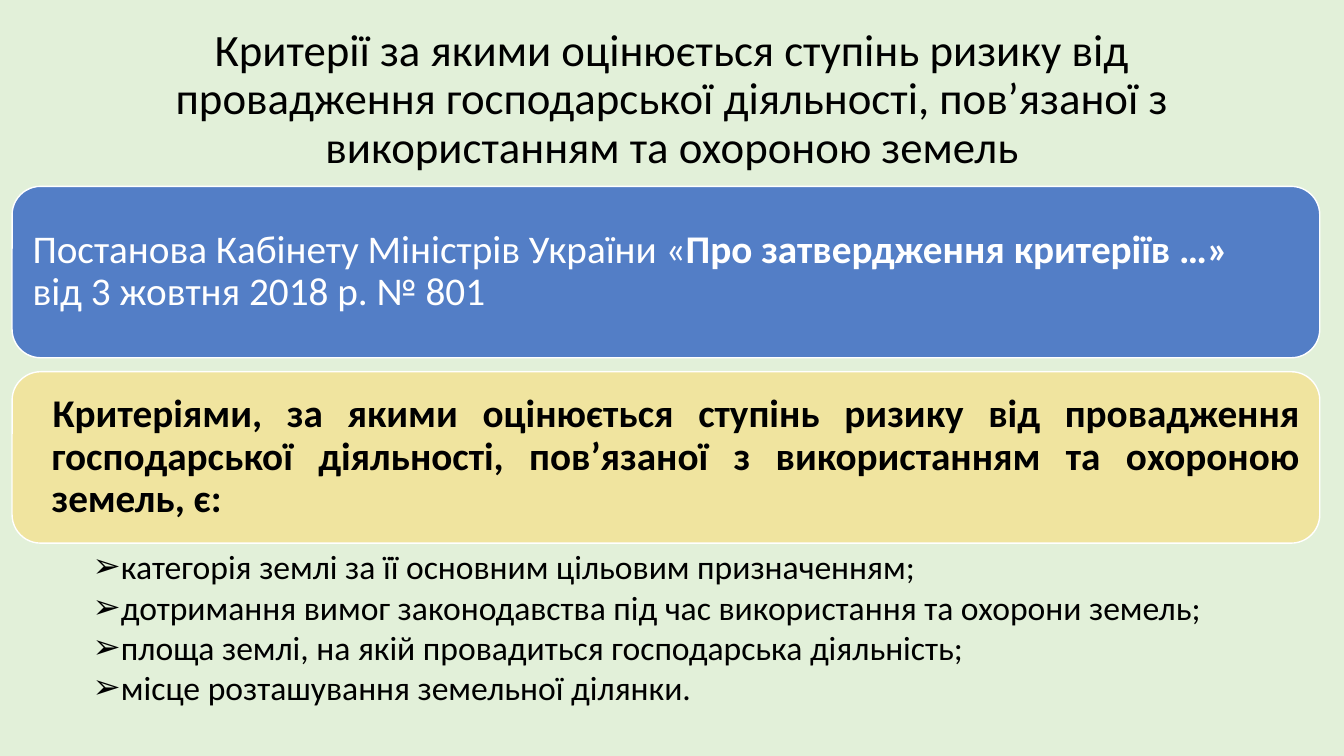
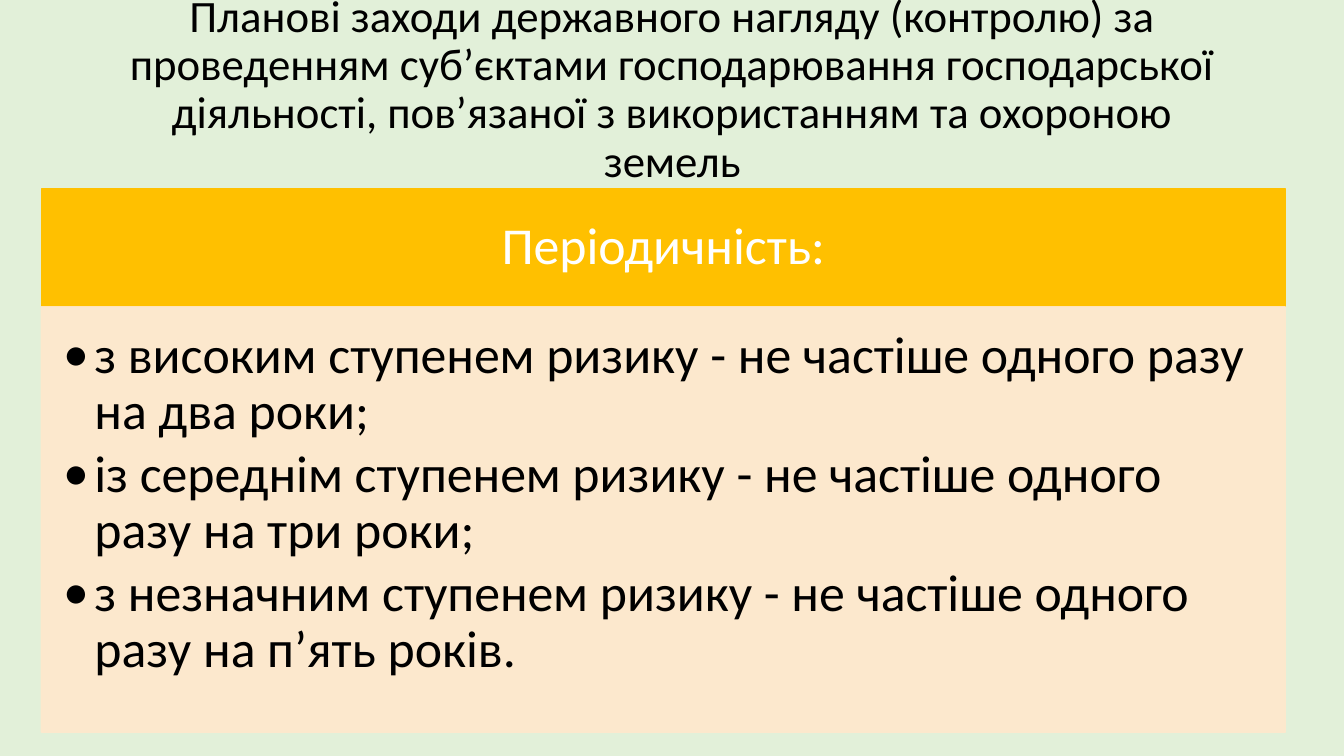
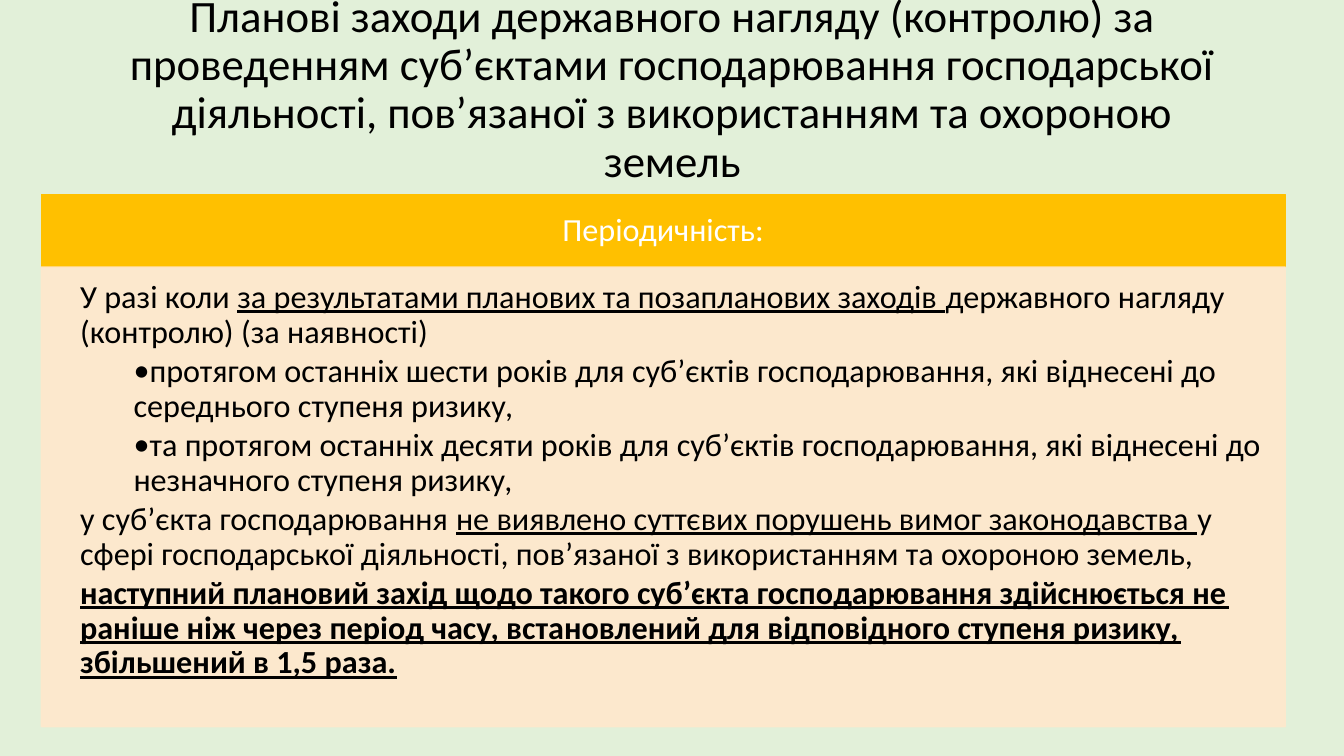
from dataclasses import dataclass

from lxml import etree
from pptx import Presentation
from pptx import util as u
from pptx.dml.color import RGBColor
from pptx.enum import shapes, text
from pptx.oxml.ns import qn


@dataclass(frozen=True)
class Theme:
    font: str = "Calibri"
    background: str = "E2F0D9"
    dark: str = "000000"
    light: str = "FFFFFF"
    blue: str = "4472C4"
    yellow: str = "FFD966"
    amber: str = "FFC000"
    cream: str = "FFE8CC"
    title_size: int = 32
    card_size: int = 28
    list_size: int = 24
    large_size: int = 37
    small_size: int = 23
    tight: float = 0.9
    paragraph_gap: float = 0.14


@dataclass
class Line:
    """One paragraph; runs are (text, style) pairs, style holding "b" and/or "u".

    margin and indent are in inches.
    """
    runs: list
    bullet: str = ""
    margin: float = 0
    indent: float = 0
    align: text.PP_ALIGN = text.PP_ALIGN.LEFT


def set_opacity(solid_parent, percent):
    """Set opacity on an element that directly holds a solid fill."""
    color = solid_parent.find(qn("a:solidFill")).find(qn("a:srgbClr"))
    etree.SubElement(color, qn("a:alpha")).set("val", str(percent * 1000))


class Deck:
    """Places elements on the current slide; lengths are percent of the slide."""

    def __init__(self, theme):
        self.theme = theme
        self.presentation = Presentation()
        self.presentation.slide_width = u.Inches(13.33)
        self.presentation.slide_height = u.Inches(7.5)
        fill = self.presentation.slide_master.background.fill
        fill.solid()
        fill.fore_color.rgb = RGBColor.from_string(theme.background)
        self.slide = None

    def box(self, left, top, width, height):
        across = self.presentation.slide_width / 100
        down = self.presentation.slide_height / 100
        return [round(n) for n in (left * across, top * down, width * across, height * down)]

    def add_slide(self, title, top):
        layout = self.presentation.slide_layouts.get_by_name("Title Only")
        self.slide = self.presentation.slides.add_slide(layout)
        shape = self.slide.shapes.title
        shape.left, shape.top, shape.width, shape.height = self.box(6.9, top, 86.25, 19.33)
        self.set_text(shape, [Line([(title, "")], align=text.PP_ALIGN.CENTER)],
                      self.theme.title_size, self.theme.dark, (0.1, 0.05, 0.1, 0.05))

    def set_text(self, shape, lines, size, color, insets, middle=True, spacing=None, gap=0):
        frame = shape.text_frame
        frame.word_wrap = True
        frame.auto_size = text.MSO_AUTO_SIZE.NONE
        frame.vertical_anchor = text.MSO_ANCHOR.MIDDLE if middle else text.MSO_ANCHOR.TOP
        (frame.margin_left, frame.margin_top,
         frame.margin_right, frame.margin_bottom) = [u.Inches(n) for n in insets]
        for index, line in enumerate(lines):
            paragraph = frame.add_paragraph() if index else frame.paragraphs[0]
            paragraph.alignment = line.align
            paragraph.line_spacing = spacing or self.theme.tight
            paragraph.space_before = u.Pt(0)
            paragraph.space_after = u.Pt(gap)
            properties = paragraph._p.get_or_add_pPr()
            properties.set("marL", str(u.Inches(line.margin)))
            properties.set("indent", str(u.Inches(line.indent)))
            if line.bullet:
                etree.SubElement(properties, qn("a:buFont")).set("typeface", self.theme.font)
                etree.SubElement(properties, qn("a:buChar")).set("char", line.bullet)
            for words, style in line.runs:
                run = paragraph.add_run()
                run.text = words
                run.font.name = self.theme.font
                run.font.size = u.Pt(size)
                run.font.color.rgb = RGBColor.from_string(color)
                run.font.bold = "b" in style
                run.font.underline = "u" in style

    def block(self, kind, place, fill, line, opacity=100, line_opacity=100):
        shape = self.slide.shapes.add_shape(kind, *self.box(*place))
        shape.shadow.inherit = False
        shape.line.width = u.Pt(1)
        for target, color in ((shape.fill, fill), (shape.line.fill, line)):
            target.solid()
            target.fore_color.rgb = RGBColor.from_string(color)
        properties = shape._element.spPr
        if opacity < 100:
            set_opacity(properties, opacity)
        if line_opacity < 100:
            set_opacity(properties.find(qn("a:ln")), line_opacity)
        return shape

    def card(self, place, fill, opacity, lines, color):
        shape = self.block(shapes.MSO_SHAPE.ROUNDED_RECTANGLE, place, fill,
                           self.theme.light, opacity)
        self.set_text(shape, lines, self.theme.card_size, color, (0.12,) * 4)

    def bullet_list(self, place, lines):
        shape = self.slide.shapes.add_textbox(*self.box(*place))
        self.set_text(shape, lines, self.theme.list_size, self.theme.dark,
                      (0.41, 0.03, 0.19, 0.03), middle=False, spacing=1.0)

    def panel(self, top, head_height, body_height, size, heading, lines):
        """A heading band over a body; insets follow the type size."""
        theme, em = self.theme, size / 72
        left, width = 3.08, 92.55
        rectangle = shapes.MSO_SHAPE.RECTANGLE
        head = self.block(rectangle, (left, top, width, head_height), theme.amber, theme.amber)
        self.set_text(head, [Line([(heading, "")], align=text.PP_ALIGN.CENTER)], size,
                      theme.light, [n * em for n in (0.56, 0.32, 0.56, 0.32)])
        body = self.block(rectangle, (left, top + head_height, width, body_height),
                          theme.cream, theme.cream, 90, 90)
        self.set_text(body, lines, size, theme.dark,
                      [n * em for n in (0.42, 0.42, 0.56, 0.63)],
                      middle=False, gap=round(size * theme.paragraph_gap, 1))


def criteria_slide(deck):
    theme = deck.theme
    deck.add_slide("Критерії за якими оцінюється ступінь ризику від провадження "
                   "господарської діяльності, пов’язаної з використанням та охороною земель", 3.6)
    height, gap = 22.67, 1.85
    decree_top = 24.65
    criteria_top = decree_top + height + gap
    left, width = 0.9, 97.3
    deck.card((left, decree_top, width, height), theme.blue, 90, [
        Line([("Постанова Кабінету Міністрів України «", ""),
              ("Про затвердження критеріїв …»", "b")]),
        Line([("від 3 жовтня 2018 р. № 801", "")]),
    ], theme.light)
    deck.card((left, criteria_top, width, height), theme.yellow, 50, [
        Line([("Критеріями, за якими оцінюється ступінь ризику від провадження "
               "господарської діяльності, пов’язаної з використанням та охороною "
               "земель, є:", "b")], margin=0.19, indent=0.01, align=text.PP_ALIGN.JUSTIFY),
    ], theme.dark)
    criteria = (
        "категорія землі за її основним цільовим призначенням;",
        "дотримання вимог законодавства під час використання та охорони земель;",
        "площа землі, на якій провадиться господарська діяльність;",
        "місце розташування земельної ділянки.",
    )
    deck.bullet_list((left, criteria_top + height, width, height),
                     [Line([(item, "")], "➢", 0.39) for item in criteria])


def inspection_slide(deck, *panel):
    deck.add_slide("Планові заходи державного нагляду (контролю) за проведенням суб’єктами "
                   "господарювання господарської діяльності, пов’язаної з використанням та "
                   "охороною земель", 2.27)
    deck.panel(*panel)


def main():
    theme = Theme()
    deck = Deck(theme)
    heading = "Періодичність:"
    criteria_slide(deck)

    periods = (
        "з високим ступенем ризику - не частіше одного разу на два роки;",
        "із середнім ступенем ризику - не частіше одного разу на три роки;",
        "з незначним ступенем ризику - не частіше одного разу на п’ять років.",
    )
    inspection_slide(deck, 25.02, 15.56, 56.27, theme.large_size, heading,
                     [Line([(item, "")], "•", 0.31, -0.31) for item in periods])

    inspection_slide(deck, 25.73, 9.6, 60.8, theme.small_size, heading, [
        Line([("У разі коли ", ""),
              ("за результатами планових та позапланових заходів ", "u"),
              ("державного нагляду (контролю) (за наявності)", "")], margin=0.25),
        Line([("протягом останніх шести років для суб’єктів господарювання, які віднесені "
               "до середнього ступеня ризику,", "")], "•", 0.78),
        Line([("та протягом останніх десяти років для суб’єктів господарювання, які "
               "віднесені до незначного ступеня ризику,", "")], "•", 0.78),
        Line([("у суб’єкта господарювання ", ""),
              ("не виявлено суттєвих порушень вимог законодавства ", "u"),
              ("у сфері господарської діяльності, пов’язаної з використанням та охороною "
               "земель,", "")], margin=0.25),
        Line([("наступний плановий захід щодо такого суб’єкта господарювання здійснюється "
               "не раніше ніж через період часу, встановлений для відповідного ступеня "
               "ризику, збільшений в 1,5 раза.", "bu")], margin=0.25),
    ])
    deck.presentation.save("out.pptx")


if __name__ == "__main__":
    main()
